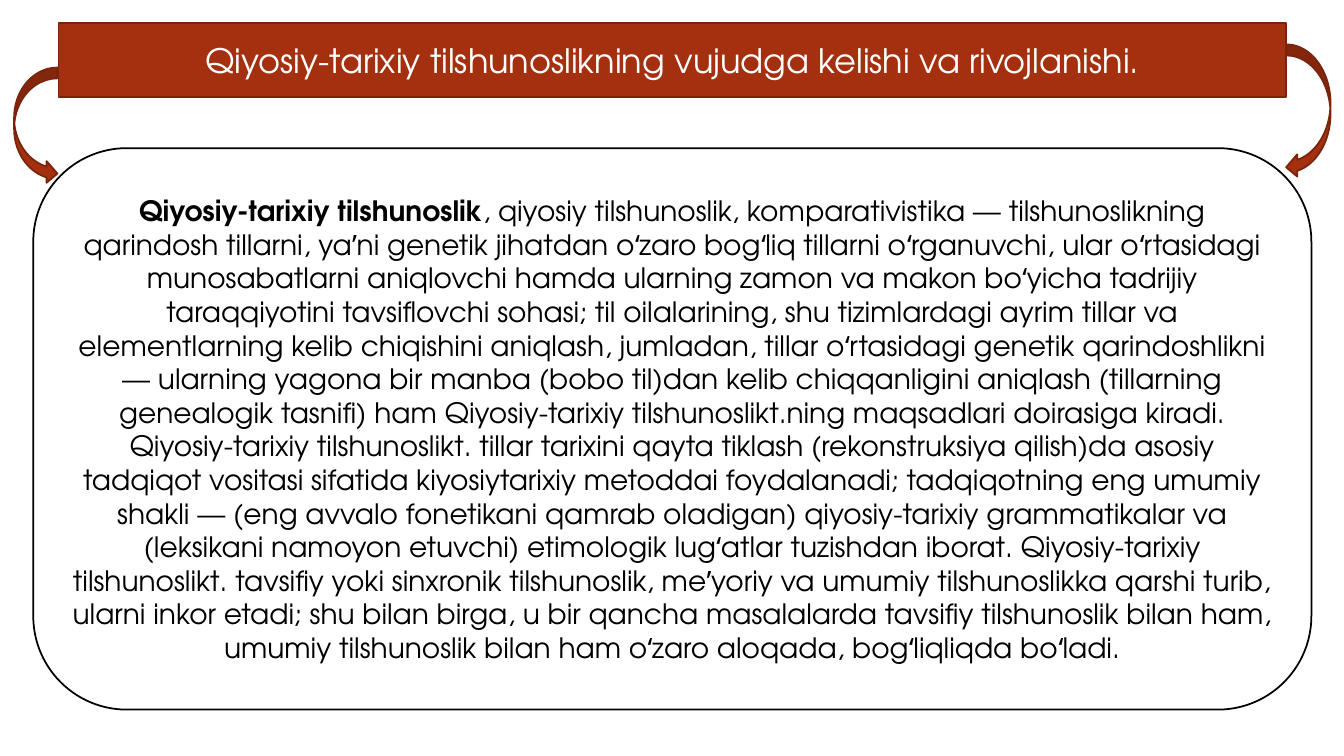
import pptx
import pptx.dml.color
import pptx.enum.shapes
import pptx.enum.text
import pptx.util
from dataclasses import dataclass

Pt = pptx.util.Pt
RGB = pptx.dml.color.RGBColor.from_string
MSO = pptx.enum.shapes.MSO_SHAPE


@dataclass(frozen=True)
class Theme:
    font: str = "TeX Gyre Adventor"
    title_size: float = 24
    body_size: float = 20
    line_width: float = 1.25
    white: str = "FFFFFF"
    black: str = "000000"
    rust: str = "A53010"
    dark_rust: str = "7A240C"


theme = Theme()


def add_box(kind, left, top, width, height, fill, line):
    sp = slide.shapes.add_shape(kind, Pt(left), Pt(top), Pt(width), Pt(height))
    sp.shadow.inherit = False
    sp.fill.solid()
    sp.fill.fore_color.rgb = RGB(fill)
    sp.line.color.rgb = RGB(line)
    sp.line.width = Pt(theme.line_width)
    return sp


def write_text(sp, runs, size, color):
    tf = sp.text_frame
    tf.word_wrap = True
    tf.vertical_anchor = pptx.enum.text.MSO_ANCHOR.MIDDLE
    p = tf.paragraphs[0]
    p.alignment = pptx.enum.text.PP_ALIGN.CENTER
    p.font.name = theme.font
    p.font.size = Pt(size)
    p.font.color.rgb = RGB(color)
    for text, bold in runs:
        r = p.add_run()
        r.text = text
        r.font.bold = bold


prs = pptx.Presentation()
prs.slide_width, prs.slide_height = Pt(960), Pt(540)
slide = prs.slides.add_slide(prs.slide_layouts[6])

# Definition panel, one clause group per entry
definition = " ".join([
    ", qiyosiy tilshunoslik, komparativistika — tilshunoslikning qarindosh tillarni, "
    "yaʼni genetik jihatdan oʻzaro bogʻliq tillarni oʻrganuvchi, ular oʻrtasidagi "
    "munosabatlarni aniqlovchi hamda ularning zamon va makon boʻyicha tadrijiy "
    "taraqqiyotini tavsiflovchi sohasi;",
    "til oilalarining, shu tizimlardagi ayrim tillar va "
    "elementlarning kelib chiqishini aniqlash, jumladan, tillar oʻrtasidagi genetik "
    "qarindoshlikni — ularning yagona bir manba (bobo til)dan kelib chiqqanligini aniqlash "
    "(tillarning genealogik tasnifi) ham Qiyosiy-tarixiy tilshunoslikt.ning maqsadlari "
    "doirasiga kiradi.",
    "Qiyosiy-tarixiy tilshunoslikt. tillar tarixini qayta tiklash "
    "(rekonstruksiya qilish)da asosiy tadqiqot vositasi sifatida kiyosiytarixiy metoddai "
    "foydalanadi; tadqiqotning eng umumiy shakli — (eng avvalo fonetikani qamrab oladigan) "
    "qiyosiy-tarixiy grammatikalar va (leksikani namoyon etuvchi) etimologik lugʻatlar "
    "tuzishdan iborat.",
    "Qiyosiy-tarixiy tilshunoslikt. tavsifiy yoki sinxronik tilshunoslik, "
    "meʼyoriy va umumiy tilshunoslikka qarshi turib, ularni inkor etadi; shu bilan birga, "
    "u bir qancha masalalarda tavsifiy tilshunoslik bilan ham, umumiy tilshunoslik bilan "
    "ham oʻzaro aloqada, bogʻliqliqda boʻladi.",
])
panel = add_box(MSO.FLOWCHART_ALTERNATE_PROCESS, 23.76, 105.84, 912.96, 401.04,
                theme.white, theme.black)
write_text(panel, [("Qiyosiy-tarixiy tilshunoslik", True), (definition, False)],
           theme.body_size, theme.black)

# Title banner
banner = add_box(MSO.FLOWCHART_PROCESS, 41.76, 16.56, 876.96, 52.56,
                 theme.rust, theme.dark_rust)
write_text(banner,
           [("Qiyosiy-tarixiy tilshunoslikning vujudga kelishi va rivojlanishi.", False)],
           theme.title_size, theme.white)

# Curved arrows from the banner to the panel
for kind, left, top, width, height in (
    (MSO.CURVED_RIGHT_ARROW, 10.08, 48.24, 30.96, 83.52),
    (MSO.CURVED_LEFT_ARROW, 918.72, 31.68, 31.68, 95.76),
):
    add_box(kind, left, top, width, height, theme.rust, theme.dark_rust)

prs.save("out.pptx")
